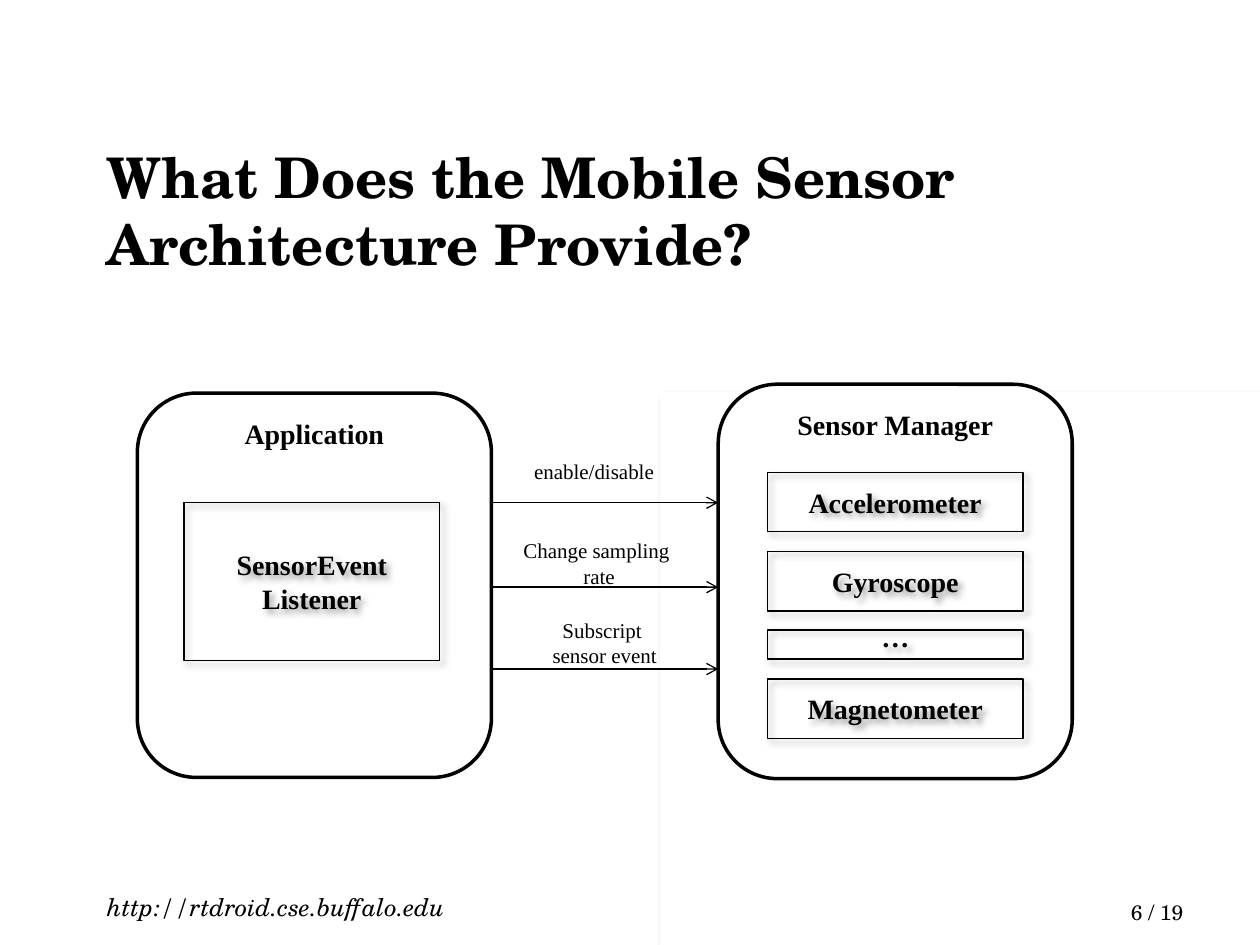
from typing import NamedTuple

from lxml.etree import SubElement
from pptx import Presentation
from pptx.dml.color import RGBColor
from pptx.enum.shapes import MSO_CONNECTOR, MSO_SHAPE
from pptx.enum.text import MSO_ANCHOR as Anchor, PP_ALIGN as Align
from pptx.oxml.ns import qn
from pptx.util import Emu, Pt

EMU_PER_PX = 9144  # 100 px to the inch
SERIF = "Times New Roman"
SCHOOL = "TeX Gyre Schola"
BLACK = "000000"
WHITE = "FFFFFF"
SENSOR_LEFT, INNER_WIDTH = 609, 203
ARROW_LEFT, ARROW_RIGHT = 391, 570


class Area(NamedTuple):
    left: int
    top: int
    width: int
    height: int


class Block(NamedTuple):
    area: Area
    lines: list[str]
    anchor: Anchor = Anchor.MIDDLE


class Message(NamedTuple):
    """A labelled arrow from the application to the sensor manager."""
    arrow_y: int
    label_area: Area
    lines: list[str]


COMPONENTS = [
    Block(Area(109, 312, 281, 305), ["Application"], Anchor.TOP),
    Block(Area(570, 305, 281, 313), ["Sensor Manager"], Anchor.TOP),
]
PARTS = [
    Block(Area(146, 399, INNER_WIDTH, 125), ["SensorEvent", "Listener"]),
    Block(Area(SENSOR_LEFT, 375, INNER_WIDTH, 47), ["Accelerometer"]),
    Block(Area(SENSOR_LEFT, 438, INNER_WIDTH, 47), ["Gyroscope"]),
    Block(Area(SENSOR_LEFT, 500, INNER_WIDTH, 23), ["…"], Anchor.BOTTOM),
    Block(Area(SENSOR_LEFT, 539, INNER_WIDTH, 47), ["Magnetometer"]),
]
MESSAGES = [
    Message(399, Area(414, 359, 128, 30), ["enable/disable"]),
    Message(466, Area(398, 422, 155, 50), ["Change sampling ", "rate"]),
    Message(531, Area(422, 485, 116, 50), ["Subscript ", "sensor event"]),
]


def px(length: int) -> Emu:
    return Emu(length * EMU_PER_PX)


def color(value: str) -> RGBColor:
    return RGBColor.from_string(value)


def write(shape, lines: list[str], *, size: int, font: str = SERIF, bold: bool = False,
          italic: bool = False, align: Align = Align.LEFT,
          anchor: Anchor = Anchor.TOP, wrap: bool = True) -> None:
    frame = shape.text_frame
    frame.word_wrap = wrap
    frame.vertical_anchor = anchor
    for index, line in enumerate(lines):
        para = frame.add_paragraph() if index else frame.paragraphs[0]
        para.alignment = align
        span = para.add_run()
        span.text = line
        span.font.name = font
        span.font.size = Pt(size)
        span.font.bold = bold
        span.font.italic = italic
        span.font.color.rgb = color(BLACK)


def add_text(page, area: Area, lines: list[str], **style) -> None:
    box = page.shapes.add_textbox(*map(px, area))
    write(box, lines, **style)


def add_shadow(shape) -> None:
    effects = shape._element.spPr.find(qn("a:effectLst"))
    shadow = SubElement(effects, qn("a:outerShdw"), blurRad=str(Pt(4)), dist=str(Pt(3)),
                        dir=str(45 * 60000), algn="tl", rotWithShape="0")
    tone = SubElement(shadow, qn("a:srgbClr"), val=BLACK)
    SubElement(tone, qn("a:alpha"), val="40000")


def add_box(page, kind: MSO_SHAPE, area: Area, *, line: str = BLACK,
            weight: float = 0.75, fill: str | None = None, shadow: bool = False):
    box = page.shapes.add_shape(kind, *map(px, area))
    box.shadow.inherit = False
    if fill:
        box.fill.solid()
        box.fill.fore_color.rgb = color(fill)
    else:
        box.fill.background()
    box.line.color.rgb = color(line)
    box.line.width = Pt(weight)
    if shadow:
        add_shadow(box)
    return box


def add_arrow(page, y: int) -> None:
    arrow = page.shapes.add_connector(MSO_CONNECTOR.STRAIGHT, px(ARROW_LEFT), px(y),
                                      px(ARROW_RIGHT), px(y))
    arrow.line.color.rgb = color(BLACK)
    arrow.line.width = Pt(0.75)
    SubElement(arrow.line._get_or_add_ln(), qn("a:tailEnd"), type="arrow")
    SubElement(arrow._element.spPr, qn("a:effectLst"))


def main() -> None:
    deck = Presentation()
    deck.slide_width, deck.slide_height = px(1000), px(750)
    page = deck.slides.add_slide(deck.slide_layouts[6])

    add_box(page, MSO_SHAPE.RECTANGLE, Area(524, 312, 476, 438),
            line=WHITE, fill=WHITE, shadow=True)
    add_text(page, Area(75, 700, 425, 40), ["http://rtdroid.cse.buffalo.edu"],
             size=14, font=SCHOOL, italic=True, anchor=Anchor.MIDDLE)
    add_text(page, Area(75, 108, 902, 118),
             ["What Does the Mobile Sensor Architecture Provide?"],
             size=32, font=SCHOOL, bold=True)

    for block in COMPONENTS:
        box = add_box(page, MSO_SHAPE.ROUNDED_RECTANGLE, block.area, weight=2, fill=WHITE)
        write(box, block.lines, size=16, bold=True, align=Align.CENTER, anchor=block.anchor)
    for block in PARTS:
        box = add_box(page, MSO_SHAPE.RECTANGLE, block.area, shadow=True)
        write(box, block.lines, size=16, bold=True, align=Align.CENTER, anchor=block.anchor)
    for message in MESSAGES:
        add_arrow(page, message.arrow_y)
        align = Align.CENTER if len(message.lines) > 1 else Align.LEFT
        add_text(page, message.label_area, message.lines, size=12, align=align, wrap=False)

    add_text(page, Area(516, 701, 433, 38), ["6 / 19"], size=12, font=SCHOOL,
             align=Align.RIGHT, anchor=Anchor.BOTTOM)
    deck.save("out.pptx")


if __name__ == "__main__":
    main()
